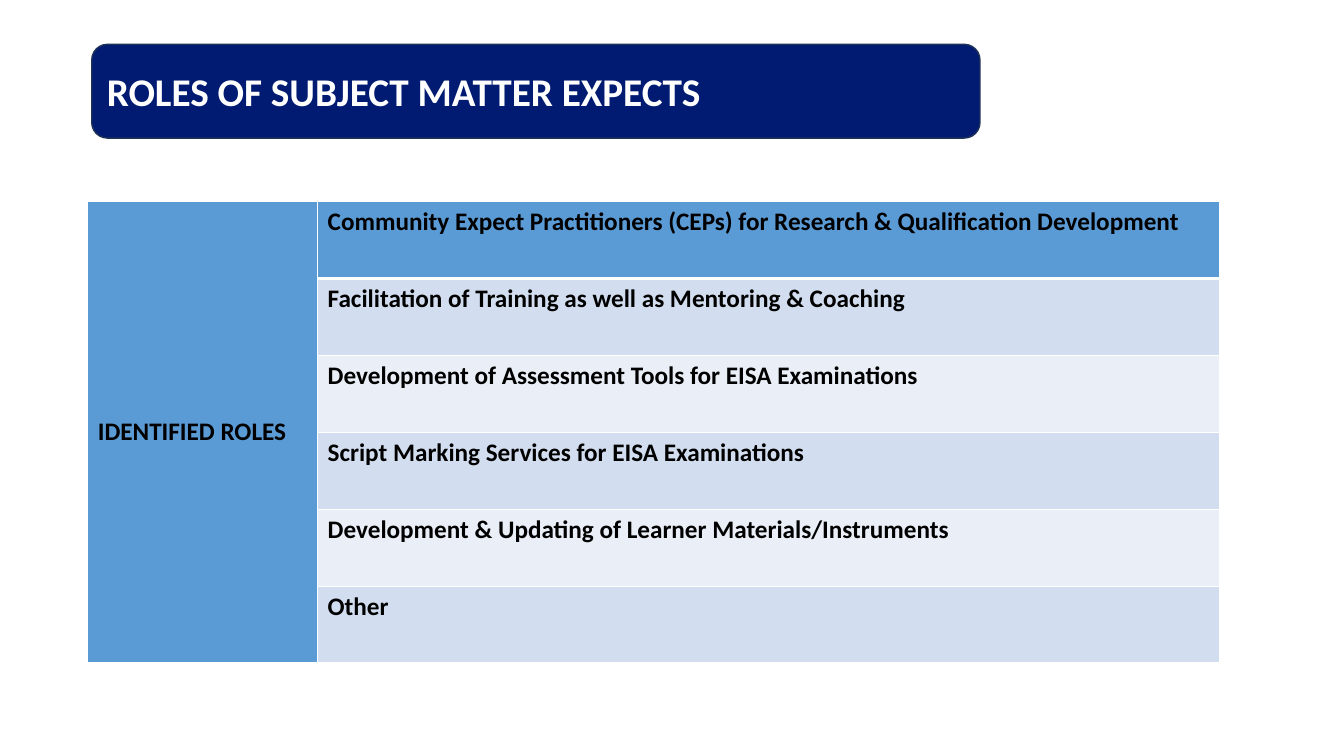
from lxml import etree
from pptx import Presentation
from pptx import util as u
from pptx.dml.color import RGBColor
from pptx.enum import shapes, text
from pptx.oxml import ns

COLOURS = {
    "navy": "001B71",
    "outline": "1E3256",
    "header": "5B9BD5",
    "band_dark": "D2DEEF",
    "band_light": "EAEFF7",
    "white": "FFFFFF",
    "black": "000000",
}
TITLE_FONT = {"name": "Calibri", "size": u.Pt(28), "bold": True}
TABLE_FONT = {"name": "Calibri", "size": u.Pt(18), "bold": True}
ROLES = [
    "Community Expect Practitioners (CEPs) for Research & Qualification Development",
    "Facilitation of Training as well as Mentoring & Coaching",
    "Development of Assessment Tools for EISA Examinations",
    "Script Marking Services for EISA Examinations",
    "Development & Updating of Learner Materials/Instruments",
    "Other",
]


def colour(name):
    return RGBColor.from_string(COLOURS[name])


def format_font(font, values, colour_name):
    for attribute, value in values.items():
        setattr(font, attribute, value)
    font.color.rgb = colour(colour_name)


def add_banner(slide, left, top, width, height):
    box = [u.Inches(length) for length in (left, top, width, height)]
    banner = slide.shapes.add_shape(shapes.MSO_SHAPE.ROUNDED_RECTANGLE, *box)
    banner.shadow.inherit = False
    banner.fill.solid()
    banner.fill.fore_color.rgb = colour("navy")
    banner.line.color.rgb = colour("outline")
    banner.line.width = u.Pt(1)

    title = slide.shapes.title
    title.left, title.top, title.width, title.height = box
    # Bring the title in front of its banner
    banner.element.addnext(title.element)
    frame = title.text_frame
    frame.text = "ROLES OF SUBJECT MATTER EXPECTS"
    frame.word_wrap = True
    frame.auto_size = text.MSO_AUTO_SIZE.NONE
    frame.vertical_anchor = text.MSO_ANCHOR.MIDDLE
    frame.margin_left = u.Inches(0.15)
    paragraph = frame.paragraphs[0]
    paragraph.alignment = text.PP_ALIGN.LEFT
    format_font(paragraph.font, TITLE_FONT, "white")


def set_borders(cell, bottom_width):
    """Draw white cell borders, with the given bottom width in points."""
    properties = cell._tc.get_or_add_tcPr()
    widths = {"a:lnL": 1, "a:lnR": 1, "a:lnT": 1, "a:lnB": bottom_width}
    for tag, width in widths.items():
        line = etree.SubElement(properties, ns.qn(tag), w=str(u.Pt(width)))
        fill = etree.SubElement(line, ns.qn("a:solidFill"))
        etree.SubElement(fill, ns.qn("a:srgbClr"), val=COLOURS["white"])


def fill_cell(cell, wording, fill_name, bottom_width=1):
    set_borders(cell, bottom_width)
    cell.fill.solid()
    cell.fill.fore_color.rgb = colour(fill_name)
    cell.text = wording
    format_font(cell.text_frame.paragraphs[0].font, TABLE_FONT, "black")


def add_roles_table(slide, left, top, width, height):
    box = [u.Inches(length) for length in (left, top, width, height)]
    table = slide.shapes.add_table(len(ROLES), 2, *box).table
    label_width = 2.28
    table.columns[0].width = u.Inches(label_width)
    table.columns[1].width = u.Inches(width - label_width)

    label = table.cell(0, 0)
    label.merge(table.cell(len(ROLES) - 1, 0))
    fill_cell(label, "IDENTIFIED ROLES", "header")
    label.vertical_anchor = text.MSO_ANCHOR.MIDDLE

    for row, role in enumerate(ROLES):
        band = "band_dark" if row % 2 else "band_light"
        if row == 0:
            fill_cell(table.cell(row, 1), role, "header", bottom_width=3)
        else:
            fill_cell(table.cell(row, 1), role, band)


def main():
    presentation = Presentation()
    presentation.slide_width = u.Inches(13.33)
    presentation.slide_height = u.Inches(7.5)
    slide = presentation.slides.add_slide(presentation.slide_layouts[5])
    add_banner(slide, 0.91, 0.44, 8.81, 0.93)
    add_roles_table(slide, 0.87, 2, 11.23, 4.58)
    presentation.save("out.pptx")


if __name__ == "__main__":
    main()
